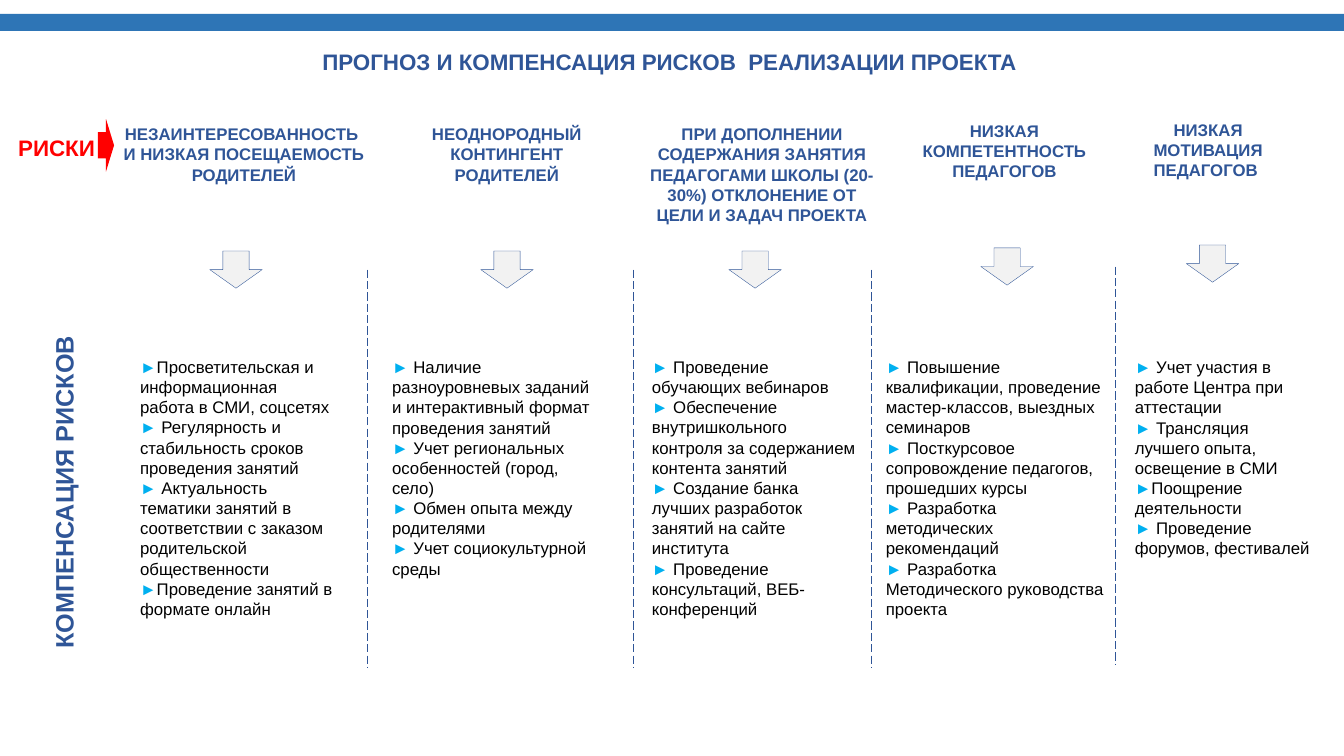
from dataclasses import dataclass

from lxml.etree import SubElement
from pptx import Presentation
from pptx.dml.color import RGBColor
from pptx.enum.dml import MSO_LINE
from pptx.enum.shapes import MSO_CONNECTOR, MSO_SHAPE
from pptx.enum.text import PP_ALIGN
from pptx.oxml.ns import qn
from pptx.util import Pt

COLORS = {
    "band": "2E75B6",
    "heading": "2F5597",
    "marker": "00B0F0",
    "body": "000000",
    "arrow": "F2F2F2",
    "risk": "FF0000",
}
FONT = "Arial"
ARROW_WIDTH, ARROW_HEIGHT = 37.5, 26.6
DIVIDER_HEIGHT = 284.5


@dataclass
class Risk:
    box: tuple  # left, top, width, height of the measures
    heading_box: tuple
    arrow: tuple  # left, top
    divider: float  # distance from the left of the measures, 0 for none
    heading: list
    measures: list


RISKS = [
    Risk((93, 251.3, 152, 196.5), (57, 85, 234.5, 51), (149.8, 179.3), 169.8,
         ["НЕЗАИНТЕРЕСОВАННОСТЬ ", "И НИЗКАЯ ПОСЕЩАЕМОСТЬ РОДИТЕЛЕЙ"],
         ["►Просветительская и информационная работа в СМИ, соцсетях",
          "► Регулярность и стабильность сроков проведения занятий",
          "► Актуальность тематики занятий в соответствии с заказом "
          "родительской общественности",
          "►Проведение занятий в формате онлайн"]),
    Risk((273, 251.3, 163.5, 167), (285, 85, 154, 51), (343.4, 179.3), 179.2,
         ["НЕОДНОРОДНЫЙ КОНТИНГЕНТ РОДИТЕЛЕЙ"],
         ["► Наличие разноуровневых заданий и интерактивный формат "
          "проведения занятий",
          "► Учет региональных особенностей (город, село)",
          "► Обмен опыта между родителями",
          "► Учет социокультурной среды"]),
    Risk((458.6, 251.3, 160, 196.5), (456.5, 85, 175.7, 80), (520.6, 179.3), 164.2,
         ["ПРИ ДОПОЛНЕНИИ СОДЕРЖАНИЯ ЗАНЯТИЯ ПЕДАГОГАМИ ШКОЛЫ "
          "(20-30%) ОТКЛОНЕНИЕ ОТ ЦЕЛИ И ЗАДАЧ ПРОЕКТА"],
         ["► Проведение обучающих вебинаров",
          "► Обеспечение внутришкольного контроля за содержанием контента занятий",
          "► Создание банка лучших разработок занятий на сайте института",
          "► Проведение консультаций, ВЕБ-конференций"]),
    Risk((625.7, 251.3, 171.5, 211), (648.7, 82.8, 137.5, 51), (700.6, 177.1), 171.3,
         ["НИЗКАЯ КОМПЕТЕНТНОСТЬ ПЕДАГОГОВ"],
         ["► Повышение квалификации, проведение мастер-классов, "
          "выездных семинаров",
          "► Посткурсовое сопровождение педагогов, прошедших курсы",
          "► Разработка методических рекомендаций",
          "► Разработка Методического руководства проекта"]),
    Risk((803.5, 251.3, 139.5, 181.5), (809.3, 82, 107.3, 51), (847.4, 175), 0,
         ["НИЗКАЯ МОТИВАЦИЯ ПЕДАГОГОВ "],
         ["► Учет участия в работе Центра при аттестации",
          "► Трансляция лучшего опыта, освещение в СМИ",
          "►Поощрение деятельности",
          "► Проведение форумов, фестивалей"]),
]


def points(box):
    return [Pt(length) for length in box]


def rgb(name):
    return RGBColor.from_string(COLORS[name])


def add_text(slide, box, paragraphs, size=12, color="heading", bold=True,
             align=PP_ALIGN.CENTER, vertical=None):
    """Each paragraph is a string; a leading ► takes the marker colour."""
    frame = slide.shapes.add_textbox(*points(box)).text_frame
    frame.word_wrap = True
    if vertical:
        frame._txBody.bodyPr.set("vert", vertical)
    for number, text in enumerate(paragraphs):
        paragraph = frame.paragraphs[0] if number == 0 else frame.add_paragraph()
        paragraph.alignment = align
        wording = text.lstrip("► ")
        marker = text[:len(text) - len(wording)]
        for part, part_color in ((marker, "marker"), (wording, color)):
            if part:
                run = paragraph.add_run()
                run.text = part
                run.font.name = FONT
                run.font.size = Pt(size)
                run.font.bold = bold
                run.font.color.rgb = rgb(part_color)


def add_block(slide, preset, box, fill, line=None):
    block = slide.shapes.add_shape(preset, *points(box))
    block.shadow.inherit = False
    block.fill.solid()
    block.fill.fore_color.rgb = rgb(fill)
    if line:
        block.line.color.rgb = rgb(line)
        block.line.width = Pt(0.25)
    else:
        block.line.fill.background()
    return block


def add_divider(slide, x, top):
    divider = slide.shapes.add_connector(
        MSO_CONNECTOR.STRAIGHT, *points((x, top, x, top + DIVIDER_HEIGHT)))
    divider.line.color.rgb = rgb("heading")
    divider.line.width = Pt(0.75)
    divider.line.dash_style = MSO_LINE.LONG_DASH
    SubElement(divider._element.spPr, qn("a:effectLst"))


def add_header(slide, box):
    left, top, width, height = box
    add_block(slide, MSO_SHAPE.RECTANGLE, (left, top, width, 12.2), "band")
    add_text(slide, (left + 62.6, top + 21, 836, height - 21),
             ["ПРОГНОЗ И КОМПЕНСАЦИЯ РИСКОВ  РЕАЛИЗАЦИИ ПРОЕКТА "], size=16)


def add_row_labels(slide, box):
    left, top, width, height = box
    add_text(slide, (left, top, width, 26.6), ["РИСКИ"], size=16, color="risk")
    pointer = add_block(slide, MSO_SHAPE.DOWN_ARROW,
                        (left + 55.5, top + 5.8, ARROW_WIDTH, 11.5), "risk")
    pointer.rotation = 270
    add_text(slide, (left + 29.5, top + 137.5, 36, height - 137.5),
             ["КОМПЕНСАЦИЯ РИСКОВ"], size=18, vertical="vert270")


def add_risk(slide, risk):
    arrow_left, arrow_top = risk.arrow
    add_text(slide, risk.heading_box, risk.heading)
    add_block(slide, MSO_SHAPE.DOWN_ARROW,
              (arrow_left, arrow_top, ARROW_WIDTH, ARROW_HEIGHT), "arrow", "heading")
    add_text(slide, risk.box, risk.measures, color="body", bold=False,
             align=PP_ALIGN.LEFT)
    if risk.divider:
        add_divider(slide, risk.box[0] + risk.divider, arrow_top + ARROW_HEIGHT / 2)


def main():
    deck = Presentation()
    deck.slide_width, deck.slide_height = Pt(960), Pt(540)
    slide = deck.slides.add_slide(deck.slide_layouts[6])

    # Band and title
    add_header(slide, (0, 10, 960, 47.6))
    # Labels of the two rows
    add_row_labels(slide, (1.5, 92.2, 77.8, 381.5))
    # One column for each risk
    for risk in RISKS:
        add_risk(slide, risk)

    deck.save("out.pptx")


if __name__ == "__main__":
    main()
